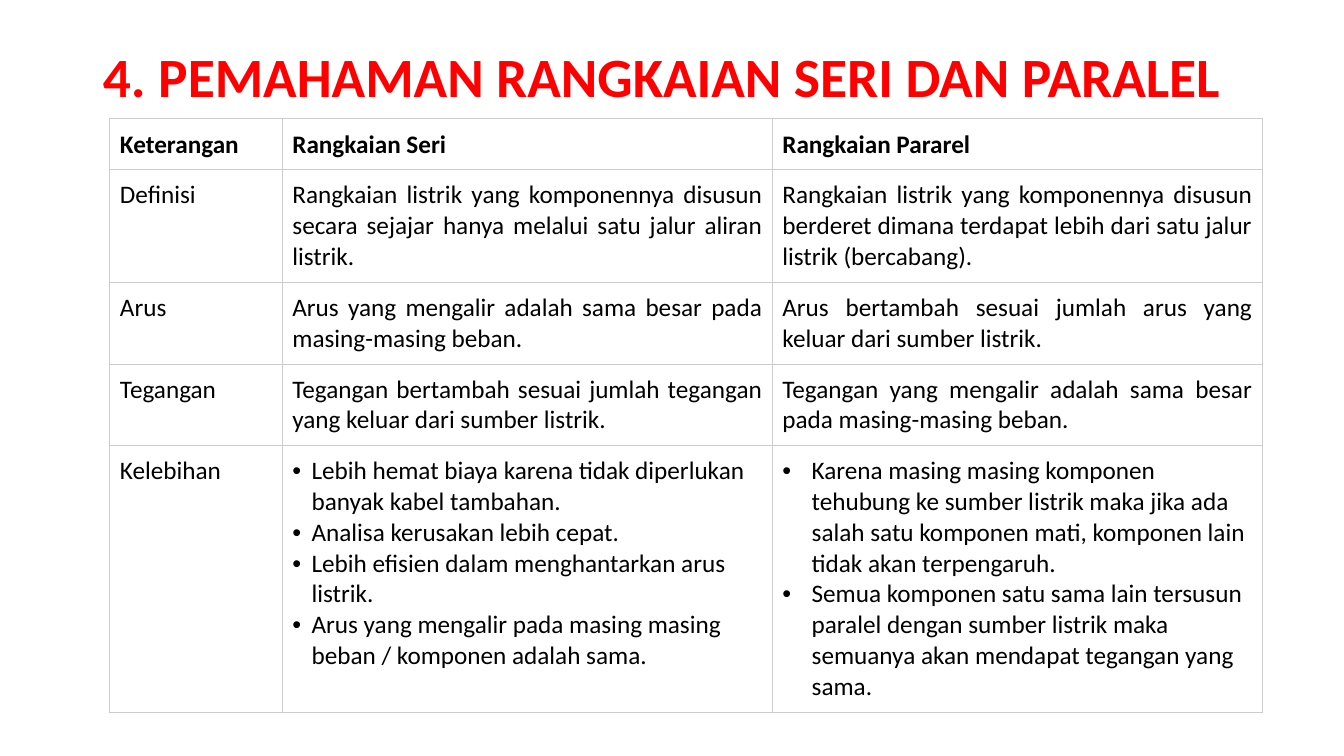
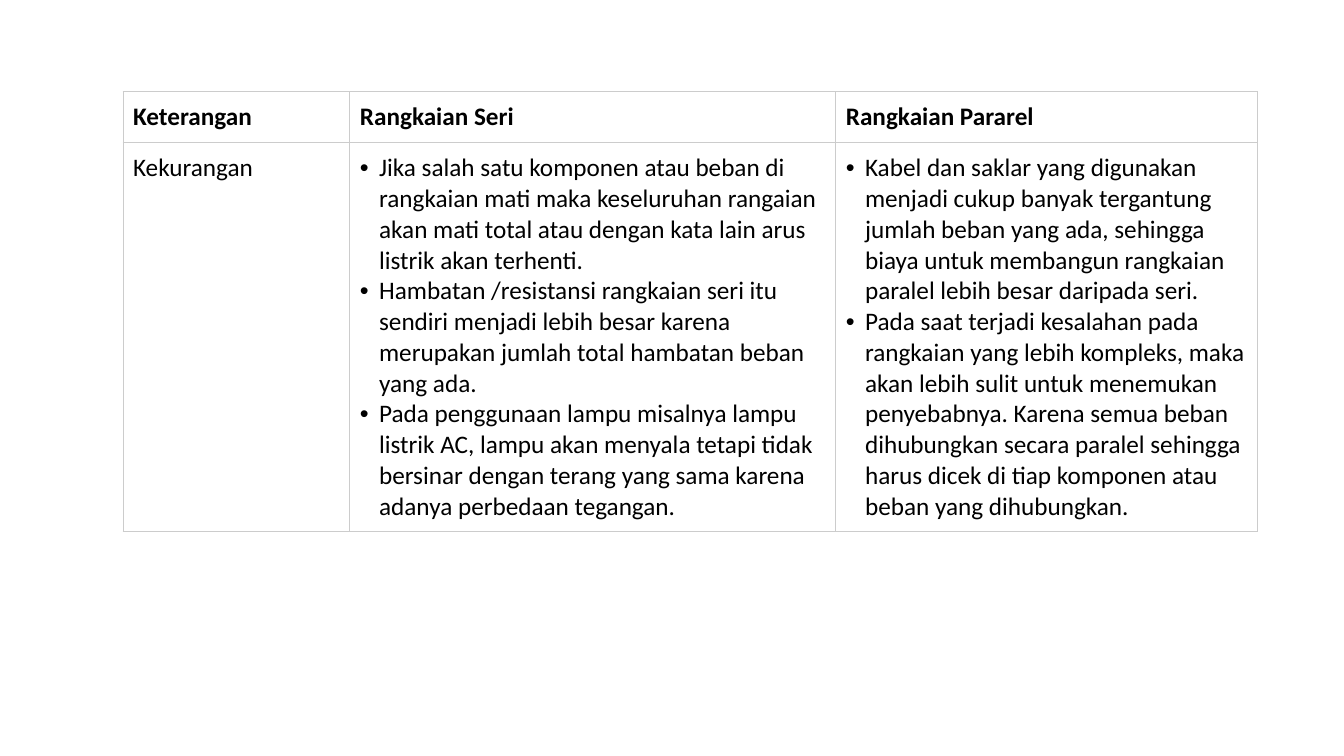
"""Build two slides that compare series and parallel circuits."""
from dataclasses import dataclass

from lxml.etree import SubElement
from pptx import Presentation
from pptx.dml.color import RGBColor
from pptx.enum.text import MSO_ANCHOR, MSO_AUTO_SIZE, PP_ALIGN
from pptx.oxml.ns import qn
from pptx.util import Inches, Pt

HEADINGS = ("Keterangan", "Rangkaian Seri", "Rangkaian Pararel")

SLIDES = [
    {
        "title": "4. PEMAHAMAN RANGKAIAN SERI DAN PARALEL",
        "position": (1.09, 1.18),
        "column_widths": (1.71, 4.86, 4.86),
        "bullet_indents": (0, 0.19, 0.29),
        "row_lines": (1, 3, 2, 2, 8),
        "rows": [
            (
                "Definisi",
                "Rangkaian listrik yang komponennya disusun secara sejajar hanya melalui satu jalur aliran listrik.",
                "Rangkaian listrik yang komponennya disusun berderet dimana terdapat lebih dari satu jalur listrik (bercabang).",
            ),
            (
                "Arus",
                "Arus yang mengalir adalah sama besar pada masing-masing beban.",
                "Arus bertambah sesuai jumlah arus yang keluar dari sumber listrik.",
            ),
            (
                "Tegangan",
                "Tegangan bertambah sesuai jumlah tegangan yang keluar dari sumber listrik.",
                "Tegangan yang mengalir adalah sama besar pada masing-masing beban.",
            ),
            (
                "Kelebihan",
                [
                    "Lebih hemat biaya karena tidak diperlukan banyak kabel tambahan.",
                    "Analisa kerusakan lebih cepat.",
                    "Lebih efisien dalam menghantarkan arus listrik.",
                    "Arus yang mengalir pada masing masing beban / komponen adalah sama.",
                ],
                [
                    "Karena masing masing komponen tehubung ke sumber listrik maka jika ada salah satu komponen mati, komponen lain tidak akan terpengaruh.",
                    "Semua komponen satu sama lain tersusun paralel dengan sumber listrik maka semuanya akan mendapat tegangan yang sama.",
                ],
            ),
        ],
    },
    {
        "title": None,
        "position": (1.22, 0.91),
        "column_widths": (2.25, 4.82, 4.18),
        "bullet_indents": (0, 0.19, 0.19),
        "row_lines": (1, 12),
        "rows": [
            (
                "Kekurangan",
                [
                    "Jika salah satu komponen atau beban di rangkaian mati maka keseluruhan rangaian akan mati total atau dengan kata lain arus listrik akan terhenti.",
                    "Hambatan /resistansi rangkaian seri itu sendiri menjadi lebih besar karena merupakan jumlah total hambatan beban yang ada.",
                    "Pada penggunaan lampu misalnya lampu listrik AC, lampu akan menyala tetapi tidak bersinar dengan terang yang sama karena adanya perbedaan tegangan.",
                ],
                [
                    "Kabel dan saklar yang digunakan menjadi cukup banyak tergantung jumlah beban yang ada, sehingga biaya untuk membangun rangkaian paralel lebih besar daripada seri.",
                    "Pada saat terjadi kesalahan pada rangkaian yang lebih kompleks, maka akan lebih sulit untuk menemukan penyebabnya. Karena semua beban dihubungkan secara paralel sehingga harus dicek di tiap komponen atau beban yang dihubungkan.",
                ],
            ),
        ],
    },
]


@dataclass(frozen=True)
class Theme:
    font: str = "Calibri"
    title_color: str = "FF0000"
    text_color: str = "000000"
    cell_color: str = "FFFFFF"
    border_color: str = "CCCCCC"
    title_size: float = 39.6
    text_size: float = 18
    border_width: float = 0.75
    cell_margin: float = 0.1
    line_height: float = 0.305


THEME = Theme()
TITLE_FRAME = {"left": 0.92, "top": 0.4, "width": 11.5, "height": 0.78}
TITLE_LAYOUT, BLANK_LAYOUT = 5, 6


def set_attributes(target, values):
    for name, value in values.items():
        setattr(target, name, value)


def format_font(font, size, color, bold):
    set_attributes(font, {"name": THEME.font, "size": Pt(size), "bold": bold})
    font.color.rgb = RGBColor.from_string(color)


def add_title(slide, text):
    title = slide.shapes.title
    set_attributes(title, {name: Inches(value) for name, value in TITLE_FRAME.items()})
    set_attributes(title.text_frame, {
        "text": text,
        "word_wrap": True,
        "auto_size": MSO_AUTO_SIZE.NONE,
        "vertical_anchor": MSO_ANCHOR.MIDDLE,
    })
    paragraph = title.text_frame.paragraphs[0]
    set_attributes(paragraph, {"alignment": PP_ALIGN.LEFT, "line_spacing": 0.9})
    format_font(paragraph.runs[0].font, THEME.title_size, THEME.title_color, True)


def add_borders(cell):
    properties = cell._tc.get_or_add_tcPr()
    for side in ("a:lnL", "a:lnR", "a:lnT", "a:lnB"):
        line = SubElement(properties, qn(side), w=str(int(Pt(THEME.border_width))))
        fill = SubElement(line, qn("a:solidFill"))
        SubElement(fill, qn("a:srgbClr"), val=THEME.border_color)


def add_bullet(paragraph, indent):
    properties = paragraph._p.get_or_add_pPr()
    properties.set("marL", str(int(Inches(indent))))
    properties.set("indent", str(-int(Inches(indent))))
    SubElement(properties, qn("a:buFont"), typeface="Arial")
    SubElement(properties, qn("a:buChar"), char="•")


def fill_cell(cell, content, bold, justified, indent):
    add_borders(cell)
    cell.fill.solid()
    cell.fill.fore_color.rgb = RGBColor.from_string(THEME.cell_color)
    sides = ("left", "right", "top", "bottom")
    set_attributes(cell, {f"margin_{side}": Inches(THEME.cell_margin) for side in sides})
    bulleted = isinstance(content, list)
    cell.text_frame.text = "\n".join(content) if bulleted else content
    for paragraph in cell.text_frame.paragraphs:
        paragraph.alignment = PP_ALIGN.JUSTIFY if justified and not bulleted else PP_ALIGN.LEFT
        if bulleted:
            add_bullet(paragraph, indent)
        format_font(paragraph.runs[0].font, THEME.text_size, THEME.text_color, bold)


def add_comparison(slide, content):
    rows = [HEADINGS, *content["rows"]]
    widths = content["column_widths"]
    heights = [2 * THEME.cell_margin + count * THEME.line_height for count in content["row_lines"]]
    left, top = content["position"]
    frame = slide.shapes.add_table(
        len(rows), len(widths), Inches(left), Inches(top), Inches(sum(widths)), Inches(sum(heights))
    )
    table = frame.table
    set_attributes(table, {"first_row": False, "horz_banding": False})
    for column, width in zip(table.columns, widths):
        column.width = Inches(width)
    for row, height in zip(table.rows, heights):
        row.height = Inches(height)
    for row_index, row in enumerate(rows):
        header = row_index == 0
        for column_index, text in enumerate(row):
            fill_cell(
                table.cell(row_index, column_index),
                text,
                bold=header,
                justified=not header and column_index > 0,
                indent=content["bullet_indents"][column_index],
            )


def main():
    presentation = Presentation()
    set_attributes(presentation, {"slide_width": Inches(13.33), "slide_height": Inches(7.5)})
    for content in SLIDES:
        layout = TITLE_LAYOUT if content["title"] else BLANK_LAYOUT
        slide = presentation.slides.add_slide(presentation.slide_layouts[layout])
        if content["title"]:
            add_title(slide, content["title"])
        add_comparison(slide, content)
    presentation.save("out.pptx")


if __name__ == "__main__":
    main()
